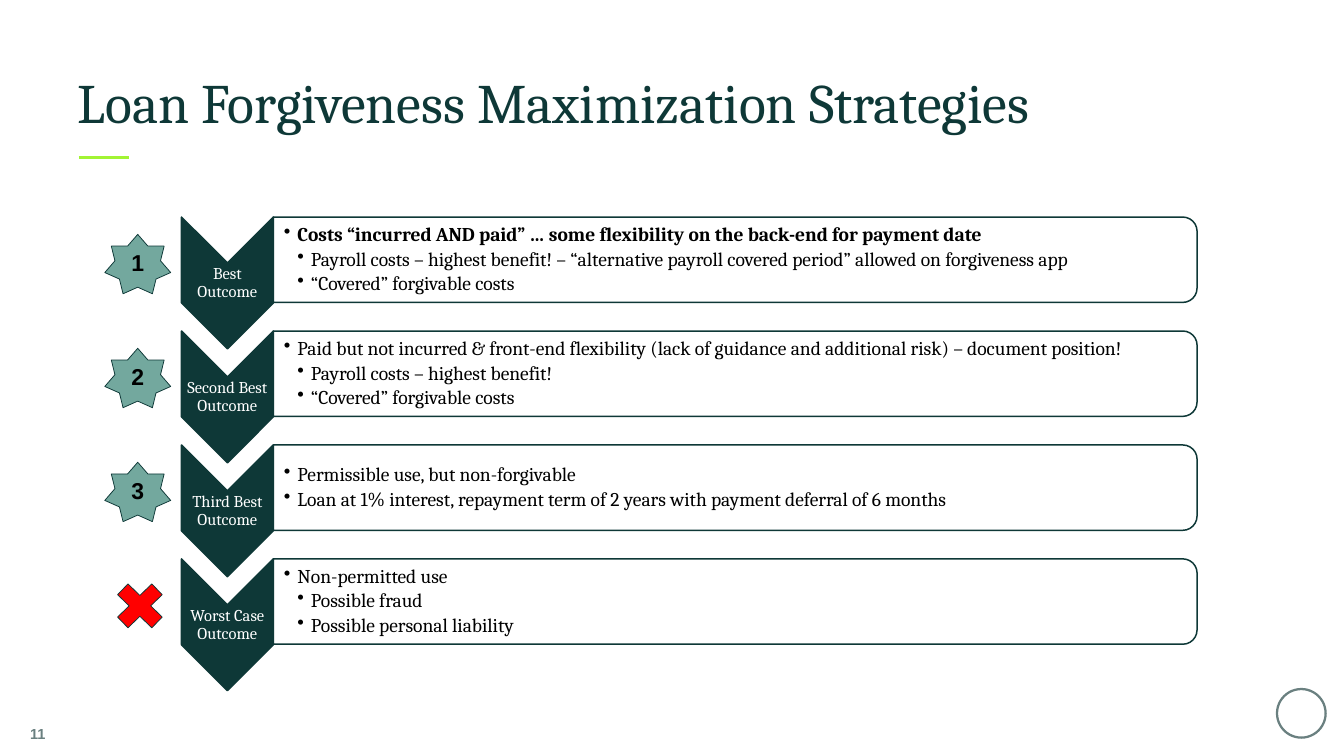
from dataclasses import dataclass

from lxml import etree
from pptx import Presentation
from pptx.dml.color import RGBColor
from pptx.enum.shapes import MSO_CONNECTOR, MSO_SHAPE
from pptx.enum.text import MSO_ANCHOR, PP_ALIGN
from pptx.oxml.ns import qn
from pptx.util import Inches, Pt

STRAIGHT = MSO_CONNECTOR.STRAIGHT
CHEVRON = MSO_SHAPE.CHEVRON
CROSS = MSO_SHAPE.MATH_MULTIPLY
OVAL = MSO_SHAPE.OVAL
PANEL = MSO_SHAPE.ROUND_2_SAME_RECTANGLE
STAR = MSO_SHAPE.STAR_7_POINT
BOTTOM, MIDDLE = MSO_ANCHOR.BOTTOM, MSO_ANCHOR.MIDDLE
LEFT, CENTER, RIGHT = PP_ALIGN.LEFT, PP_ALIGN.CENTER, PP_ALIGN.RIGHT


@dataclass(frozen=True)
class Theme:
    dark: str = "0E3837"
    accent: str = "A2F434"
    badge: str = "73A89E"
    warning: str = "FF0000"
    muted: str = "6A8080"
    white: str = "FFFFFF"
    black: str = "000000"
    serif: str = "Cambria"
    sans: str = "Arial"
    title_size: float = 37.1
    badge_size: float = 15.3
    body_size: float = 13
    label_size: float = 11
    number_size: float = 9.7


class SlideBuilder:
    def __init__(self, slide, theme):
        self.slide = slide
        self.theme = theme

    def shape(self, kind, box, fill, line, line_width, quarter_turn=False):
        """Draw a preset; box is always the visible left, top, width, height."""
        left, top, width, height = box
        if quarter_turn:
            left += (width - height) / 2
            top += (height - width) / 2
            width, height = height, width
        shape = self.slide.shapes.add_shape(
            kind, Inches(left), Inches(top), Inches(width), Inches(height))
        shape.rotation = 90 if quarter_turn else 0
        shape.shadow.inherit = False
        if fill:
            shape.fill.solid()
            shape.fill.fore_color.rgb = RGBColor.from_string(fill)
        else:
            shape.fill.background()
        shape.line.color.rgb = RGBColor.from_string(line)
        shape.line.width = Pt(line_width)
        return shape

    def line(self, start, end, color, width):
        connector = self.slide.shapes.add_connector(
            STRAIGHT, *(Inches(value) for value in (*start, *end)))
        connector.line.color.rgb = RGBColor.from_string(color)
        connector.line.width = Pt(width)
        etree.SubElement(connector._element.spPr, qn("a:effectLst"))

    def frame(self, box, anchor, inset=0, left_inset=None):
        text_box = self.slide.shapes.add_textbox(*(Inches(value) for value in box))
        frame = text_box.text_frame
        frame.word_wrap = True
        frame.vertical_anchor = anchor
        frame.margin_left = Inches(inset if left_inset is None else left_inset)
        frame.margin_top = frame.margin_right = frame.margin_bottom = Inches(inset)
        return frame

    def run(self, paragraph, text, font, size, color, bold=False, align=LEFT):
        paragraph.alignment = align
        run = paragraph.add_run()
        run.text = text
        run.font.name = font
        run.font.size = Pt(size)
        run.font.bold = bold
        run.font.color.rgb = RGBColor.from_string(color)

    def badge(self, box, text):
        theme = self.theme
        star = self.shape(STAR, box, theme.badge, theme.dark, 0.5)
        star.text_frame.vertical_anchor = MIDDLE
        self.run(star.text_frame.paragraphs[0], text, theme.sans,
                 theme.badge_size, theme.black, True, CENTER)

    def chevron(self, left, top, label):
        theme = self.theme
        self.shape(CHEVRON, (left, top, 0.85, 1.22), theme.dark, theme.dark, 1, True)
        frame = self.frame((left, top + 0.43, 0.85, 0.37), MIDDLE, 0.01)
        paragraph = frame.paragraphs[0]
        paragraph.line_spacing = 0.9
        self.run(paragraph, label, theme.serif, theme.label_size, theme.white,
                 align=CENTER)

    def panel(self, left, top, items):
        """Draw a panel of bullets; each item is (level, text, bold)."""
        theme = self.theme
        panel = self.shape(PANEL, (left, top, 8.55, 0.79), theme.white,
                           theme.dark, 1, True)
        color = panel._element.spPr.find(qn("a:solidFill"))[0]
        etree.SubElement(color, qn("a:alpha"), val="90000")
        frame = self.frame((left, top + 0.04, 8.51, 0.71), MIDDLE, 0.01, 0.1)
        for index, (level, text, bold) in enumerate(items):
            paragraph = frame.add_paragraph() if index else frame.paragraphs[0]
            paragraph.level = level
            paragraph.line_spacing = 0.9
            paragraph.space_after = Pt(2.3)
            properties = paragraph._p.get_or_add_pPr()
            properties.set("marL", str(Inches(0.125 * level)))
            properties.set("indent", str(-Inches(0.125)))
            etree.SubElement(properties, qn("a:buChar"), char="•")
            self.run(paragraph, text, theme.serif, theme.body_size, theme.black, bold)


OUTCOMES = [
    ("1", "Best Outcome", [
        (1, "Costs “incurred AND paid” … some flexibility on the back-end "
            "for payment date", True),
        (2, "Payroll costs – highest benefit! – “alternative payroll covered "
            "period” allowed on forgiveness app", False),
        (2, "“Covered” forgivable costs", False)]),
    ("2", "Second Best Outcome", [
        (1, "Paid but not incurred & front-end flexibility (lack of guidance "
            "and additional risk) – document position!", False),
        (2, "Payroll costs – highest benefit!", False),
        (2, "“Covered” forgivable costs", False)]),
    ("3", "Third Best Outcome", [
        (1, "Permissible use, but non-forgivable", False),
        (1, "Loan at 1% interest, repayment term of 2 years with payment "
            "deferral of 6 months", False)]),
    (None, "Worst Case Outcome", [
        (1, "Non-permitted use", False),
        (2, "Possible fraud", False),
        (2, "Possible personal liability", False)]),
]
FIRST_ROW_TOP = 2.01
ROW_PITCH = 1.055


def main():
    theme = Theme()
    presentation = Presentation()
    presentation.slide_width = Inches(12.44)
    presentation.slide_height = Inches(7)
    slide = presentation.slides.add_slide(presentation.slide_layouts[6])
    builder = SlideBuilder(slide, theme)

    builder.shape(OVAL, (11.82, 6.38, 0.45, 0.45), None, theme.muted, 1.5)
    builder.line((0.73, 1.46), (1.19, 1.46), theme.accent, 2)
    title = builder.frame((0.72, 0.5, 11, 0.75), BOTTOM)
    builder.run(title.paragraphs[0], "Loan Forgiveness Maximization Strategies",
                theme.serif, theme.title_size, theme.dark)
    number = builder.frame((0, 6.58, 0.42, 0.42), MIDDLE)
    builder.run(number.paragraphs[0], "11", theme.sans, theme.number_size,
                theme.muted, True, RIGHT)

    for row, (rank, label, items) in enumerate(OUTCOMES):
        top = FIRST_ROW_TOP + row * ROW_PITCH
        builder.chevron(1.68, top, label)
        builder.panel(2.53, top, items)
        if rank:
            builder.badge((0.97, top + 0.16, 0.61, 0.55), rank)
        else:
            builder.shape(CROSS, (0.99, top + 0.14, 0.61, 0.59),
                          theme.warning, theme.dark, 0.5)

    presentation.save("out.pptx")


if __name__ == "__main__":
    main()
